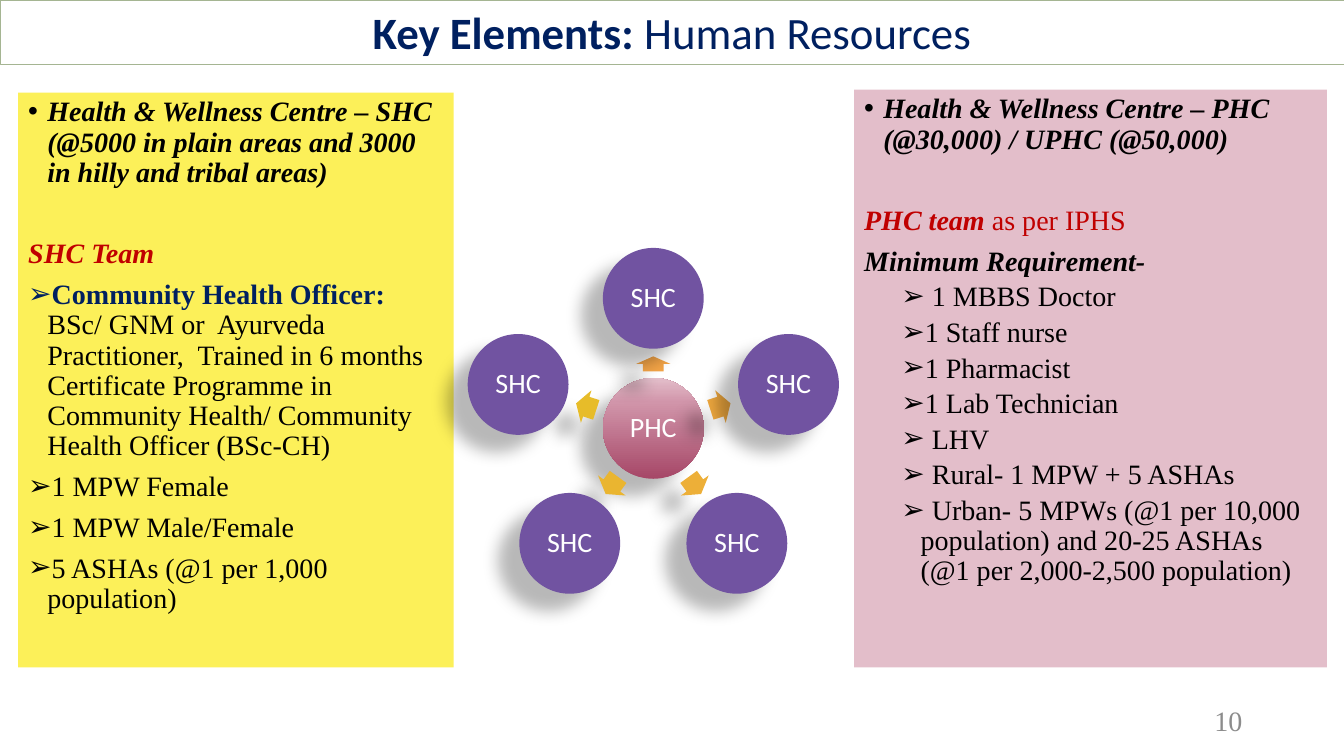
from dataclasses import dataclass
from math import cos, radians, sin

from lxml.etree import SubElement
from pptx import Presentation
from pptx.dml.color import RGBColor
from pptx.enum.shapes import MSO_SHAPE
from pptx.enum.text import MSO_ANCHOR, MSO_AUTO_SIZE, PP_ALIGN
from pptx.oxml import parse_xml
from pptx.oxml.ns import nsdecls, qn
from pptx.shapes.autoshape import Shape
from pptx.text.text import TextFrame
from pptx.util import Inches, Pt

BLACK = RGBColor(0x00, 0x00, 0x00)
WHITE = RGBColor(0xFF, 0xFF, 0xFF)
GREY = RGBColor(0x8C, 0x8C, 0x8C)
RED = RGBColor(0xC0, 0x00, 0x00)
NAVY = RGBColor(0x00, 0x20, 0x60)
YELLOW = RGBColor(0xFC, 0xF0, 0x59)
PINK = RGBColor(0xE3, 0xBE, 0xCA)
ROSE = RGBColor(0xD1, 0x95, 0xAA)
WINE = RGBColor(0xA6, 0x47, 0x67)
PURPLE = RGBColor(0x71, 0x53, 0xA1)
GREEN = RGBColor(0xA5, 0xB5, 0x92)
SERIF, SANS = "Times New Roman", "Calibri"
HUB_X, HUB_Y, DISC = 6.48, 4.25, 1.0


@dataclass
class Span:
    text: str
    color: RGBColor = BLACK
    bold: bool = False
    slant: bool = False


@dataclass
class Line:
    spans: list[Span]
    mark: str = ""
    level: int = 0
    left: float = 0.19
    hang: float = -0.19
    before: float = 7.5


@dataclass
class Spoke:
    angle: int
    color: RGBColor
    reach: float = 1.41
    mid: float = 0.7
    length: float = 0.21


def write(frame: TextFrame, text: str, *, size: float, font: str, color: RGBColor,
          bold: bool = False, slant: bool = False,
          align: PP_ALIGN = PP_ALIGN.LEFT) -> None:
    para = frame.paragraphs[-1]
    para.alignment = align
    run = para.add_run()
    run.text = text
    run.font.size = Pt(size)
    run.font.name = font
    run.font.color.rgb = color
    run.font.bold = bold
    run.font.italic = slant


def place(shape: Shape, left: float, top: float, width: float, height: float) -> None:
    shape.left, shape.top = Inches(left), Inches(top)
    shape.width, shape.height = Inches(width), Inches(height)


def paint(shape: Shape, color: RGBColor) -> None:
    shape.fill.solid()
    shape.fill.fore_color.rgb = color


def fill_panel(panel: Shape, color: RGBColor, lines: list[Line]) -> None:
    paint(panel, color)
    frame = panel.text_frame
    frame.auto_size = MSO_AUTO_SIZE.NONE
    for index, line in enumerate(lines):
        para = frame.add_paragraph() if index else frame.paragraphs[0]
        para.level = line.level
        para.line_spacing = 0.9
        para.space_before = Pt(line.before)
        props = para._p.get_or_add_pPr()
        props.set("marL", str(Inches(line.left)))
        props.set("indent", str(Inches(line.hang)))
        if line.mark:
            SubElement(props, qn("a:buChar")).set("char", line.mark)
        else:
            SubElement(props, qn("a:buNone"))
        for span in line.spans:
            write(frame, span.text, size=20, font=SERIF, color=span.color,
                  bold=span.bold, slant=span.slant)


def cast(shape: Shape) -> None:
    shape.line.fill.background()
    shape._element.spPr.append(parse_xml(
        f'<a:effectLst {nsdecls("a")}><a:outerShdw blurRad="{Pt(11.8)}" '
        f'dist="{Pt(19.7)}" dir="{141 * 60000}" rotWithShape="0">'
        '<a:srgbClr val="000000"><a:alpha val="28000"/></a:srgbClr>'
        '</a:outerShdw></a:effectLst>'))


def add_disc(x: float, y: float, text: str) -> Shape:
    disc = slide.shapes.add_shape(
        MSO_SHAPE.OVAL, Inches(x - DISC / 2), Inches(y - DISC / 2),
        Inches(DISC), Inches(DISC))
    paint(disc, PURPLE)
    cast(disc)
    frame = disc.text_frame
    frame.word_wrap = True
    frame.vertical_anchor = MSO_ANCHOR.MIDDLE
    frame.margin_left = frame.margin_right = Inches(0.03)
    frame.margin_top = frame.margin_bottom = Inches(0.03)
    frame.paragraphs[0].line_spacing = 0.9
    write(frame, text, size=20, font=SANS, color=WHITE, align=PP_ALIGN.CENTER)
    return disc


def shade(disc: Shape) -> None:
    stops = "".join(
        f'<a:gs pos="{spot * 1000}"><a:srgbClr val="{color}"/></a:gs>'
        for spot, color in ((0, WINE), (76, ROSE), (100, PINK)))
    props = disc._element.spPr
    props.replace(props.find(qn("a:solidFill")), parse_xml(
        f'<a:gradFill {nsdecls("a")}><a:gsLst>{stops}</a:gsLst>'
        f'<a:lin ang="{270 * 60000}" scaled="0"/></a:gradFill>'))


def add_spoke(spoke: Spoke) -> None:
    dx, dy = cos(radians(spoke.angle)), sin(radians(spoke.angle))
    width = 0.34
    arrow = slide.shapes.add_shape(
        MSO_SHAPE.RIGHT_ARROW,
        Inches(HUB_X + spoke.mid * dx - spoke.length / 2),
        Inches(HUB_Y + spoke.mid * dy - width / 2),
        Inches(spoke.length), Inches(width))
    arrow.rotation = spoke.angle
    arrow.adjustments[0], arrow.adjustments[1] = 0.6, 0.5
    paint(arrow, spoke.color)
    cast(arrow)
    add_disc(HUB_X + spoke.reach * dx, HUB_Y + spoke.reach * dy, "SHC")


SHC_LINES = [
    Line([Span("Health & Wellness Centre – SHC (@5000 in plain areas and 3000 "
               "in hilly and tribal areas)", bold=True, slant=True)], "•"),
    Line([Span("SHC Team", RED, True, True)], before=36.5),
    Line([Span("Community Health Officer: ", NAVY, True),
          Span("BSc/ GNM or  Ayurveda Practitioner,  Trained in 6 months "
               "Certificate Programme in Community Health/ Community Health "
               "Officer (BSc-CH)")], "➢"),
    *[Line([Span(text)], "➢") for text in (
        "1 MPW Female", "1 MPW Male/Female", "5 ASHAs (@1 per 1,000 population)")],
]
PHC_LINES = [
    Line([Span("Health & Wellness Centre – PHC (@30,000) / UPHC (@50,000)",
               bold=True, slant=True)], "•"),
    Line([Span("PHC team ", RED, True, True), Span("as per IPHS", RED)],
         left=0, hang=0, before=36.5),
    Line([Span("Minimum Requirement-", bold=True, slant=True)], left=0, hang=0),
    *[Line([Span(text)], "➢", level=1, left=0.56, before=3.8) for text in (
        " 1 MBBS Doctor", "1 Staff nurse", "1 Pharmacist", "1 Lab Technician",
        " LHV", " Rural- 1 MPW + 5 ASHAs",
        " Urban- 5 MPWs (@1 per 10,000 population) and 20-25 ASHAs "
        "(@1 per 2,000-2,500 population)")],
]
SPOKES = [
    Spoke(270, RGBColor(0xF3, 0xA4, 0x47), reach=1.29, mid=0.64, length=0.15),
    Spoke(342, RGBColor(0xF0, 0xA9, 0x3F)),
    Spoke(54, RGBColor(0xED, 0xAF, 0x38)),
    Spoke(126, RGBColor(0xEA, 0xB5, 0x30)),
    Spoke(198, RGBColor(0xE7, 0xBC, 0x29)),
]

deck = Presentation()
deck.slide_width, deck.slide_height = Inches(13.33), Inches(7.5)
slide = deck.slides.add_slide(deck.slide_layouts[3])
title, left, right = slide.placeholders

place(title, 0, 0, 13.33, 0.64)
paint(title, WHITE)
title.line.color.rgb = GREEN
title.line.width = Pt(0.5)
title.text_frame.auto_size = MSO_AUTO_SIZE.NONE
title.text_frame.vertical_anchor = MSO_ANCHOR.TOP
for text, bold in (("Key Elements: ", True), ("Human Resources", False)):
    write(title.text_frame, text, size=32, font=SANS, color=NAVY, bold=bold,
          align=PP_ALIGN.CENTER)

place(left, 0.18, 0.92, 4.32, 5.7)
fill_panel(left, YELLOW, SHC_LINES)
place(right, 8.47, 0.89, 4.69, 5.73)
fill_panel(right, PINK, PHC_LINES)

shade(add_disc(HUB_X, HUB_Y, "PHC"))
for spoke in SPOKES:
    add_spoke(spoke)

page = slide.shapes.add_textbox(Inches(9.42), Inches(6.95), Inches(3), Inches(0.4))
page.text_frame.word_wrap = True
page.text_frame.vertical_anchor = MSO_ANCHOR.MIDDLE
write(page.text_frame, "10", size=20, font=SERIF, color=GREY, align=PP_ALIGN.RIGHT)

deck.save("out.pptx")
